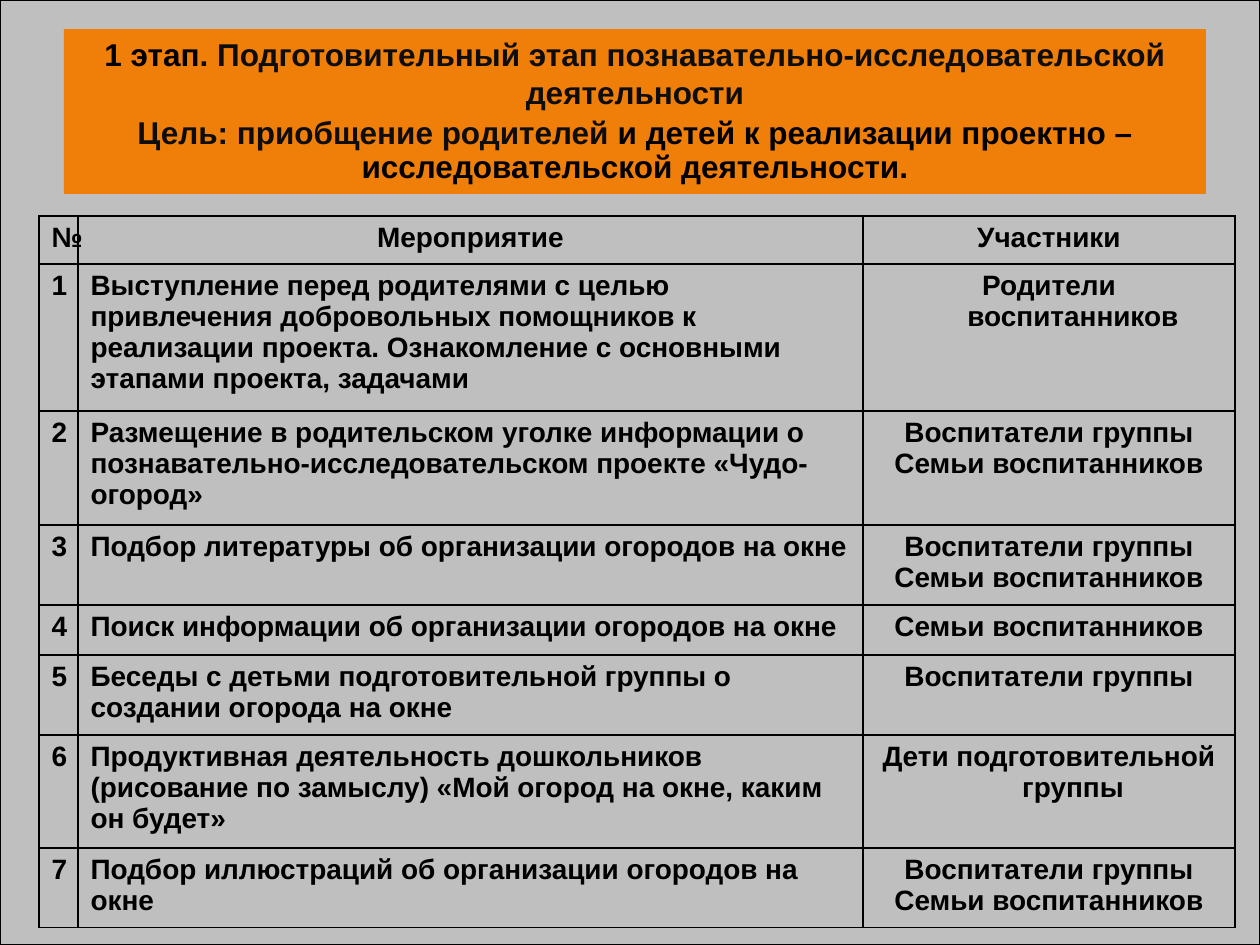
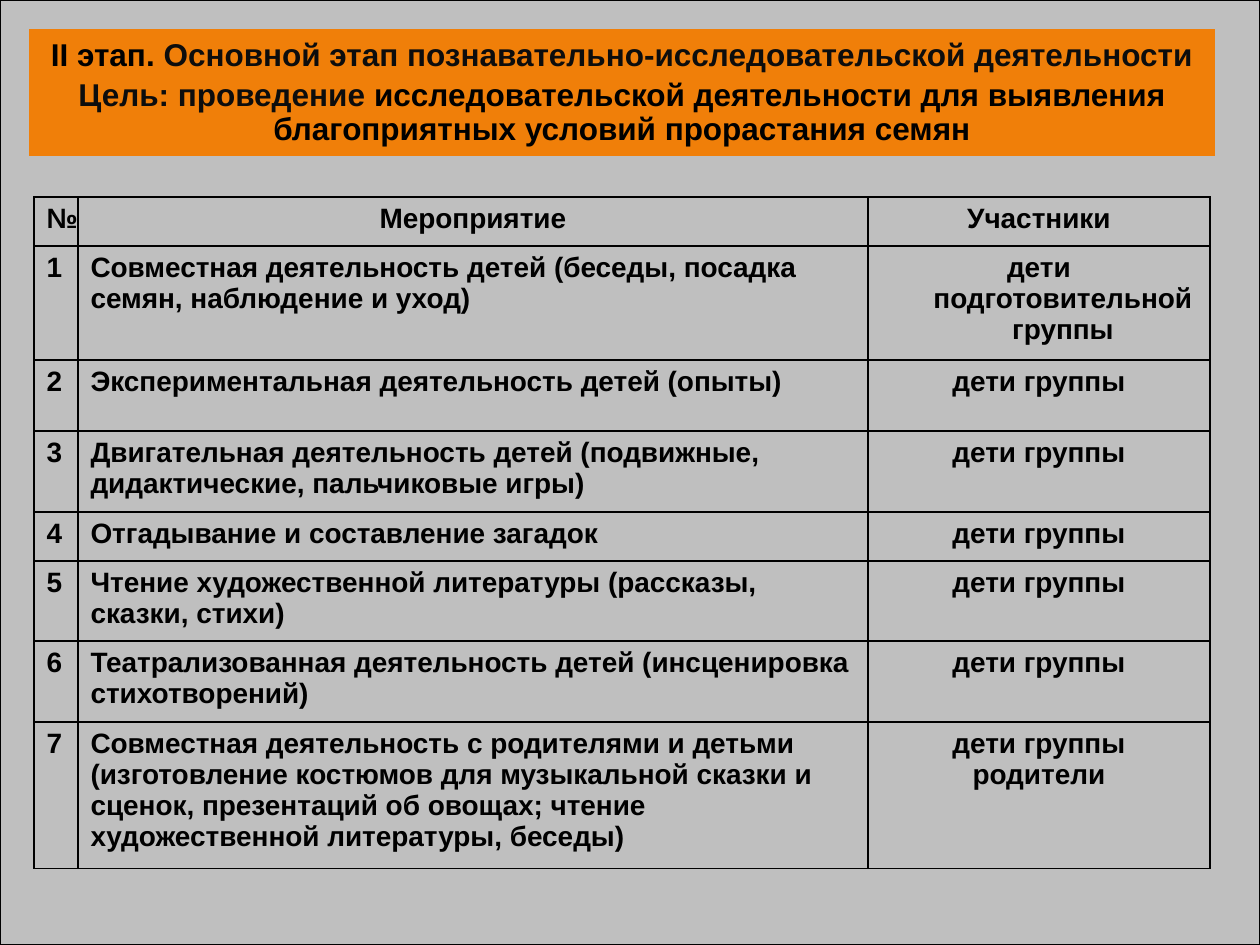
from dataclasses import dataclass
from lxml.etree import SubElement
from pptx import Presentation
from pptx.dml.color import RGBColor
from pptx.enum.shapes import MSO_SHAPE
from pptx.enum.text import MSO_ANCHOR, MSO_AUTO_SIZE, PP_ALIGN
from pptx.oxml.ns import qn
from pptx.util import Pt


@dataclass(frozen=True)
class Theme:
    font: str = "Arial"
    ink: str = "000000"
    soft: str = "0D0D0D"
    back: str = "BFBFBF"
    band: str = "F07F09"
    head: int = 18
    cell: int = 16
    frame: float = 0.75
    rule: int = 1
    hang: int = 48


THEME = Theme()
SCALE = 914400 / 126
WIDE, HIGH = 1260, 945

HEADS = ("№", "Мероприятие", "Участники")
STAFF = "Воспитатели группы"
HOMES = "Семьи воспитанников"
KIDS = "дети группы"

STAGES = [
    {
        "box": (64, 29, 1142, 165),
        "title": ("1 этап", ". Подготовительный этап познавательно-исследовательской деятельности"),
        "goal": ("Цель: приобщение родителей ",
                 "и детей к реализации проектно – исследовательской деятельности."),
        "place": (39, 216),
        "cols": (39, 785, 372),
        "rows": (48, 147, 114, 80, 50, 80, 113, 80),
        "tasks": [
            ("Выступление перед родителями с целью привлечения добровольных помощников "
             "к реализации проекта. Ознакомление с основными этапами проекта, задачами",
             ["Родители воспитанников"]),
            ("Размещение в родительском уголке информации о "
             "познавательно-исследовательском проекте «Чудо-огород»", [STAFF, HOMES]),
            ("Подбор литературы об организации огородов на окне", [STAFF, HOMES]),
            ("Поиск информации об организации огородов на окне", [HOMES]),
            ("Беседы с детьми подготовительной группы о создании огорода на окне", [STAFF]),
            ("Продуктивная деятельность дошкольников (рисование по замыслу) "
             "«Мой огород на окне, каким он будет»", ["Дети подготовительной группы"]),
            ("Подбор иллюстраций об организации огородов на окне", [STAFF, HOMES]),
        ],
    },
    {
        "box": (29, 29, 1186, 127),
        "title": ("II этап. ", "Основной этап познавательно-исследовательской деятельности"),
        "goal": ("Цель: проведение ",
                 "исследовательской деятельности для выявления благоприятных условий "
                 "прорастания семян"),
        "place": (34, 197),
        "cols": (44, 790, 342),
        "rows": (49, 114, 71, 81, 49, 80, 81, 147),
        "tasks": [
            ("Совместная деятельность детей (беседы, посадка семян, наблюдение и уход)",
             ["дети подготовительной группы"]),
            ("Экспериментальная деятельность детей (опыты)", [KIDS]),
            ("Двигательная деятельность детей (подвижные, дидактические, пальчиковые игры)",
             [KIDS]),
            ("Отгадывание и составление загадок", [KIDS]),
            ("Чтение художественной литературы (рассказы, сказки, стихи)", [KIDS]),
            ("Театрализованная деятельность детей (инсценировка стихотворений)", [KIDS]),
            ("Совместная деятельность с родителями и детьми (изготовление костюмов для "
             "музыкальной сказки и сценок, презентаций об овощах; чтение художественной "
             "литературы, беседы)", [KIDS, "родители"]),
        ],
    },
]


def px(size):
    return round(size * SCALE)


def tint(code):
    return RGBColor.from_string(code)


def style(para, size, align):
    para.alignment = align
    para.font.name = THEME.font
    para.font.size = Pt(size)
    para.font.bold = True


def add_back(slide):
    rect = slide.shapes.add_shape(MSO_SHAPE.RECTANGLE, 0, 0, px(WIDE), px(HIGH))
    rect.shadow.inherit = False
    rect.fill.solid()
    rect.fill.fore_color.rgb = tint(THEME.back)
    rect.line.color.rgb = tint(THEME.ink)
    rect.line.width = Pt(THEME.frame)
    slide.shapes.title.element.addprevious(rect.element)


def add_head(slide, stage):
    head = slide.shapes.title
    head.left, head.top, head.width, head.height = map(px, stage["box"])
    head.fill.solid()
    head.fill.fore_color.rgb = tint(THEME.band)
    frame = head.text_frame
    frame.word_wrap = True
    frame.auto_size = MSO_AUTO_SIZE.NONE
    frame.vertical_anchor = MSO_ANCHOR.TOP
    first, goal = frame.paragraphs[0], frame.add_paragraph()
    goal.line_spacing = 0.9
    goal.space_before = Pt(THEME.head * 0.2)
    lines = ((first, stage["title"], (THEME.ink, THEME.soft)),
             (goal, stage["goal"], (THEME.soft, THEME.ink)))
    for para, parts, inks in lines:
        style(para, THEME.head, PP_ALIGN.CENTER)
        for text, ink in zip(parts, inks):
            run = para.add_run()
            run.text = text
            run.font.color.rgb = tint(ink)


def add_rules(cell):
    props = cell._tc.get_or_add_tcPr()
    for side in ("lnL", "lnR", "lnT", "lnB"):
        line = SubElement(props, qn(f"a:{side}"), w=str(Pt(THEME.rule)))
        fill = SubElement(line, qn("a:solidFill"))
        SubElement(fill, qn("a:srgbClr"), val=THEME.ink)


def fill_cell(cell, lines, align, hang):
    add_rules(cell)
    cell.fill.background()
    cell.text = "\n".join(lines)
    for para in cell.text_frame.paragraphs:
        if hang:
            props = para._p.get_or_add_pPr()
            props.set("marL", str(px(THEME.hang)))
            props.set("indent", str(-px(THEME.hang)))
        style(para, THEME.cell, align)
        para.font.color.rgb = tint(THEME.ink)


def add_grid(slide, stage):
    cols, rows = stage["cols"], stage["rows"]
    left, top = stage["place"]
    size = map(px, (left, top, sum(cols), sum(rows)))
    grid = slide.shapes.add_table(len(rows), len(cols), *size).table
    grid.first_row = grid.horz_banding = False
    for col, width in zip(grid.columns, cols):
        col.width = px(width)
    for row, height in zip(grid.rows, rows):
        row.height = px(height)
    data = [[[head] for head in HEADS]]
    data += [[[str(num)], [task], who] for num, (task, who) in enumerate(stage["tasks"], 1)]
    for y, row in enumerate(data):
        for x, lines in enumerate(row):
            mid = y == 0 or x == 2
            align = PP_ALIGN.CENTER if mid else PP_ALIGN.LEFT
            fill_cell(grid.cell(y, x), lines, align, mid or x == 0)


def main():
    deck = Presentation()
    deck.slide_width, deck.slide_height = px(WIDE), px(HIGH)
    for stage in STAGES:
        slide = deck.slides.add_slide(deck.slide_layouts[5])
        add_back(slide)
        add_head(slide, stage)
        add_grid(slide, stage)
    deck.save("out.pptx")


if __name__ == "__main__":
    main()
